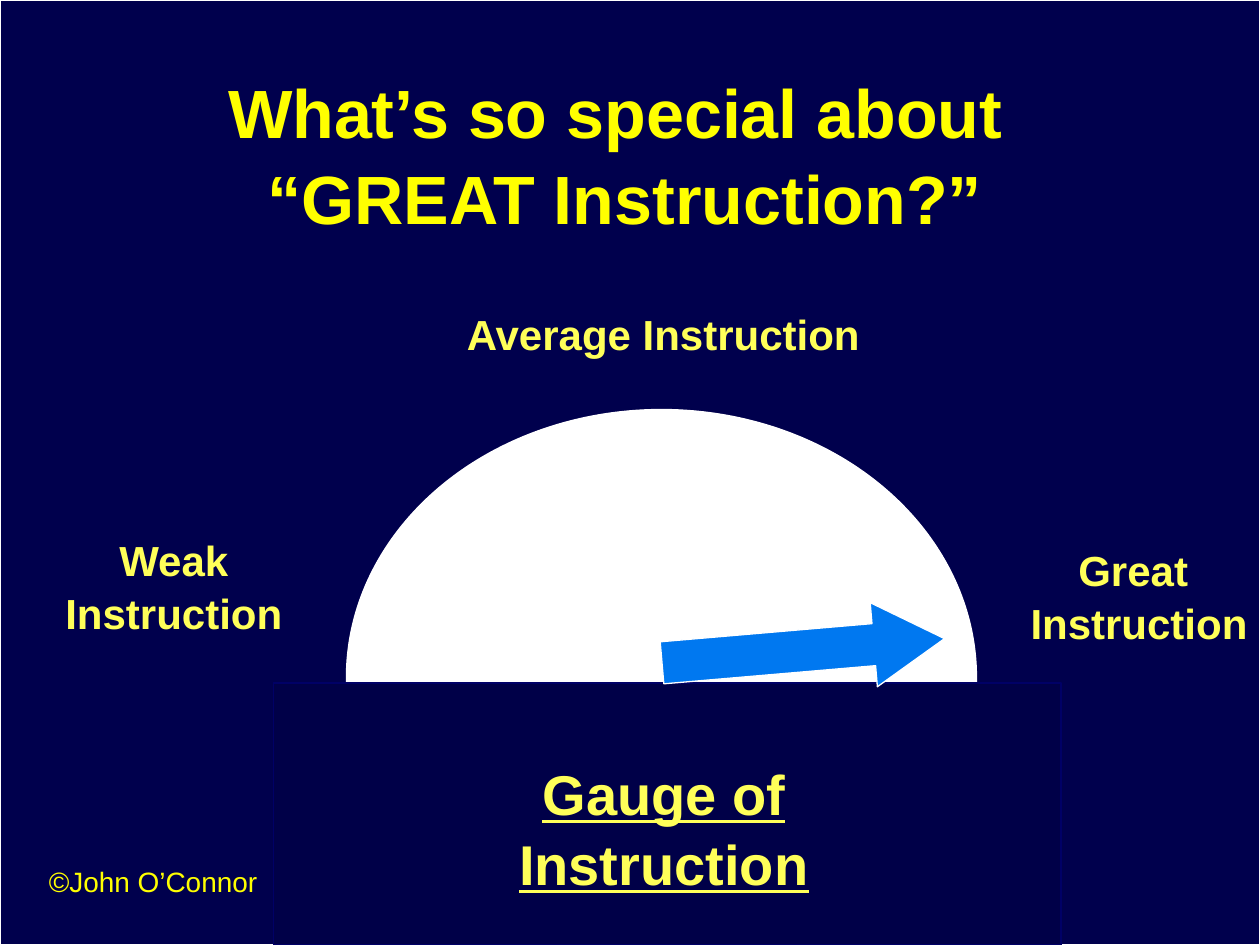
from dataclasses import dataclass

from pptx import Presentation
from pptx.dml.color import RGBColor
from pptx.enum.shapes import MSO_SHAPE
from pptx.enum.text import MSO_ANCHOR, PP_ALIGN
from pptx.shapes.autoshape import Shape
from pptx.slide import Slide
from pptx.util import Inches, Pt

FONT = "Arial"
LINE_SPACING = 1.05
BACKGROUND = RGBColor(0x00, 0x00, 0x66)
PANEL = RGBColor(0x00, 0x00, 0x4D)
GAUGE_BASE = RGBColor(0x00, 0x00, 0x48)
WHITE = RGBColor(0xFF, 0xFF, 0xFF)
NEEDLE_BLUE = RGBColor(0x00, 0x78, 0xF0)
YELLOW = RGBColor(0xFF, 0xFF, 0x00)
PALE_YELLOW = RGBColor(0xFF, 0xFF, 0x59)


@dataclass(frozen=True)
class Box:
    left: float
    top: float
    width: float
    height: float

    def lengths(self) -> list[Inches]:
        return [Inches(v) for v in (self.left, self.top, self.width, self.height)]


@dataclass(frozen=True)
class Label:
    """A text block; a vertical tab in the text is a line break."""
    text: str
    box: Box
    size: int = 24
    color: RGBColor = PALE_YELLOW
    bold: bool = True
    underline: bool = False
    wrap: bool = False
    align: PP_ALIGN = PP_ALIGN.CENTER
    anchor: MSO_ANCHOR = MSO_ANCHOR.TOP


LABELS = [
    Label("©John O’Connor", Box(0.29, 6.8, 1.87, 0.37), size=16, color=YELLOW,
          bold=False, align=PP_ALIGN.LEFT),
    Label("What’s so special about \v“GREAT Instruction?”", Box(0.42, 0.5, 9.08, 1.42),
          size=39, color=YELLOW, wrap=True, anchor=MSO_ANCHOR.MIDDLE),
    Label("Weak\nInstruction", Box(0.41, 4.17, 1.94, 0.91)),
    Label("Average Instruction", Box(3.6, 2.38, 3.33, 0.5)),
    Label("Great \nInstruction", Box(8.07, 4.25, 1.94, 0.91)),
    Label("Gauge of\vInstruction", Box(3, 5.95, 4.54, 1.17), size=32,
          underline=True, wrap=True),
]


def add_filled_shape(slide: Slide, kind: MSO_SHAPE, box: Box,
                     fill: RGBColor, line: RGBColor) -> Shape:
    shape = slide.shapes.add_shape(kind, *box.lengths())
    shape.shadow.inherit = False
    shape.fill.solid()
    shape.fill.fore_color.rgb = fill
    shape.line.color.rgb = line
    shape.line.width = Pt(0.75)
    return shape


def add_label(slide: Slide, label: Label) -> None:
    text_frame = slide.shapes.add_textbox(*label.box.lengths()).text_frame
    text_frame.word_wrap = label.wrap
    text_frame.vertical_anchor = label.anchor
    text_frame.text = label.text
    for paragraph in text_frame.paragraphs:
        paragraph.alignment = label.align
        paragraph.line_spacing = LINE_SPACING
        for run in paragraph.runs:
            run.font.name = FONT
            run.font.size = Pt(label.size)
            run.font.bold = label.bold
            run.font.underline = label.underline
            run.font.color.rgb = label.color


def add_gauge(slide: Slide) -> None:
    """Draw a dial whose lower half is covered by the base, and its needle."""
    add_filled_shape(slide, MSO_SHAPE.OVAL, Box(2.75, 3.25, 5, 4.25), WHITE, WHITE)
    add_filled_shape(slide, MSO_SHAPE.RECTANGLE, Box(2.17, 5.42, 6.25, 2.08),
                     GAUGE_BASE, BACKGROUND)
    needle = add_filled_shape(slide, MSO_SHAPE.RIGHT_ARROW, Box(5.25, 4.83, 2.25, 0.67),
                              NEEDLE_BLUE, WHITE)
    needle.adjustments[0] = 0.5
    needle.adjustments[1] = 0.84
    needle.rotation = 355.1


def main() -> None:
    presentation = Presentation()
    presentation.slide_width = Inches(10)
    presentation.slide_height = Inches(7.5)
    slide = presentation.slides.add_slide(presentation.slide_layouts[6])
    slide.background.fill.solid()
    slide.background.fill.fore_color.rgb = BACKGROUND
    add_filled_shape(slide, MSO_SHAPE.RECTANGLE, Box(0, 0, 10, 7.5), PANEL, WHITE)
    add_gauge(slide)
    for label in LABELS:
        add_label(slide, label)
    presentation.save("out.pptx")


if __name__ == "__main__":
    main()
